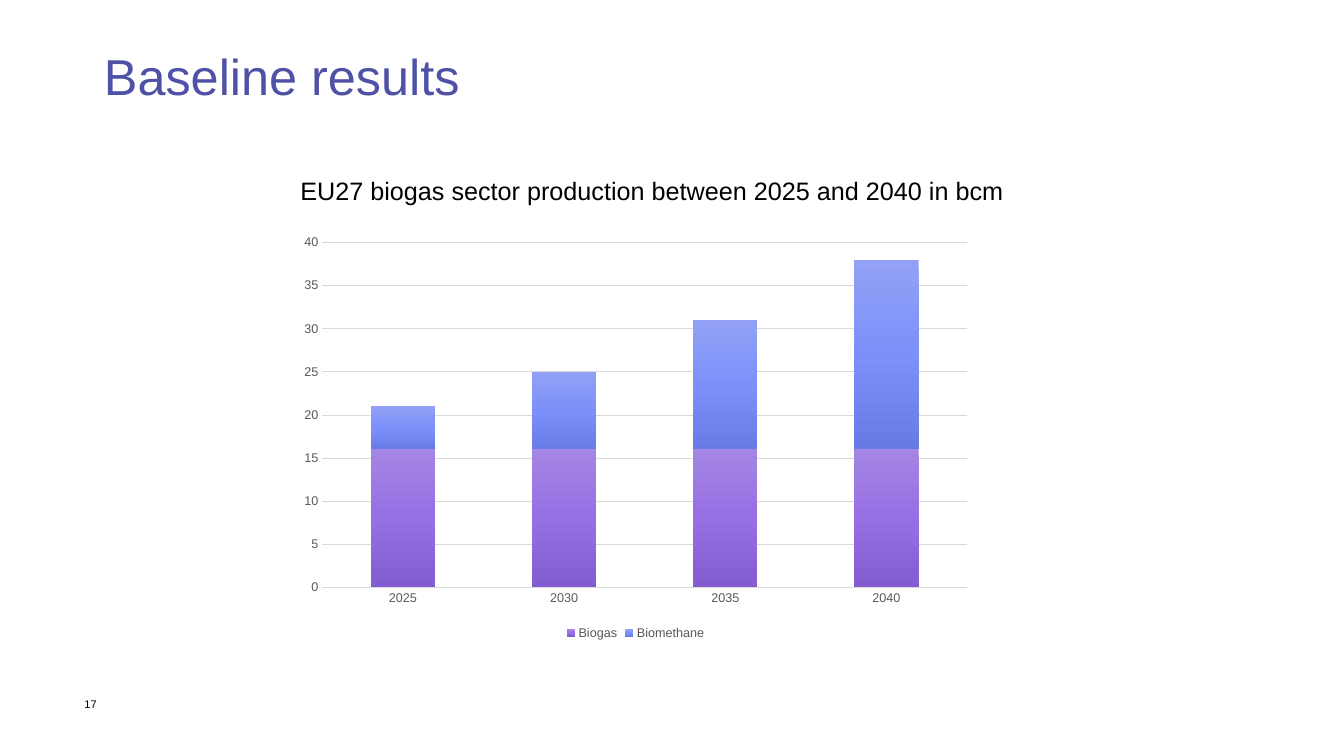
"""Build the slide on baseline results of EU27 biogas sector production."""
from dataclasses import dataclass

from lxml.etree import SubElement
from pptx import Presentation
from pptx.chart.data import CategoryChartData as ChartData
from pptx.dml.color import RGBColor as Rgb
from pptx.enum.chart import XL_CHART_TYPE as ChartType
from pptx.enum.chart import XL_LEGEND_POSITION as LegendPosition
from pptx.enum.chart import XL_TICK_MARK as TickMark
from pptx.enum.text import MSO_ANCHOR as Anchor
from pptx.enum.text import MSO_AUTO_SIZE as AutoSize
from pptx.enum.text import PP_ALIGN as Align
from pptx.oxml.ns import qn
from pptx.util import Cm, Pt

HEADING = "Baseline results"
CAPTION = "EU27 biogas sector production between 2025 and 2040 in bcm"
PAGE_NUMBER = "17"
YEARS = ["2025", "2030", "2035", "2040"]
PRODUCTION = {"Biogas": [16, 16, 16, 16], "Biomethane": [5, 9, 15, 22]}

PAGE_SIZE = (33.87, 19.05)
HEADING_AREA = (2.62, 0.84, 22.1, 2.18)
CAPTION_AREA = (7.32, 4.29, 18.24, 1.02)
CHART_AREA = (7.32, 5.72, 17.4, 10.52)
NUMBER_AREA = (1.88, 17.45, 1.14, 0.66)


@dataclass(frozen=True)
class Theme:
    font: str = "Arial"
    heading: str = "4E51A5"
    text: str = "000000"
    label: str = "595959"
    grid: str = "D9D9D9"
    gradients: tuple = (
        ("A486E4", "966FE4", "835CD1"),
        ("92A1F6", "7C90F9", "677BE4"),
    )
    heading_size: float = 36
    caption_size: float = 18
    chart_size: float = 10
    label_size: float = 9
    number_size: float = 7.9


THEME = Theme()


def style_font(font, size, color):
    font.name = THEME.font
    font.size = Pt(size)
    font.color.rgb = Rgb.from_string(color)


def write(frame, words, size, color):
    run = frame.paragraphs[0].add_run()
    run.text = words
    style_font(run.font, size, color)


def add_heading(slide):
    heading = slide.shapes.title
    heading.left, heading.top, heading.width, heading.height = map(Cm, HEADING_AREA)
    frame = heading.text_frame
    frame.auto_size = AutoSize.NONE
    frame.vertical_anchor = Anchor.MIDDLE
    frame.margin_left = frame.margin_right = frame.margin_bottom = 0
    frame.paragraphs[0].alignment = Align.LEFT
    frame.paragraphs[0].line_spacing = 0.9
    write(frame, HEADING, THEME.heading_size, THEME.heading)


def add_text(slide, area, words, size):
    frame = slide.shapes.add_textbox(*map(Cm, area)).text_frame
    frame.word_wrap = True
    write(frame, words, size, THEME.text)
    return frame


def fill_gradient(series, colors):
    properties = series.format.fill._xPr
    gradient = SubElement(properties, qn("a:gradFill"), rotWithShape="1")
    stops = SubElement(gradient, qn("a:gsLst"))
    for step, color in enumerate(colors):
        position = step * 100000 // (len(colors) - 1)
        stop = SubElement(stops, qn("a:gs"), pos=str(position))
        SubElement(stop, qn("a:srgbClr"), val=color)
    SubElement(gradient, qn("a:lin"), ang="5400000", scaled="0")


def style_axis(axis):
    axis.major_tick_mark = axis.minor_tick_mark = TickMark.NONE
    style_font(axis.tick_labels.font, THEME.label_size, THEME.label)


def add_production_chart(slide):
    production = ChartData(number_format="0")
    production.categories = YEARS
    for gas, amounts in PRODUCTION.items():
        production.add_series(gas, amounts)
    chart = slide.shapes.add_chart(
        ChartType.COLUMN_STACKED, *map(Cm, CHART_AREA), production
    ).chart
    style_font(chart.font, THEME.chart_size, THEME.text)
    chart.has_title = False

    chart.has_legend = True
    chart.legend.position = LegendPosition.BOTTOM
    chart.legend.include_in_layout = False
    style_font(chart.legend.font, THEME.label_size, THEME.label)

    years, amounts = chart.category_axis, chart.value_axis
    style_axis(years)
    style_axis(amounts)
    years.format.line.color.rgb = Rgb.from_string(THEME.grid)
    years.format.line.width = Pt(1)
    amounts.minimum_scale, amounts.maximum_scale, amounts.major_unit = 0, 40, 5
    amounts.tick_labels.number_format = "0"
    amounts.tick_labels.number_format_is_linked = False
    amounts.format.line.fill.background()
    grid = amounts.major_gridlines.format.line
    grid.color.rgb = Rgb.from_string(THEME.grid)
    grid.width = Pt(0.75)

    columns = chart.plots[0]
    columns.gap_width, columns.overlap = 150, 100
    columns.vary_by_categories = False
    for series, colors in zip(columns.series, THEME.gradients):
        series.invert_if_negative = False
        fill_gradient(series, colors)


def main():
    deck = Presentation()
    deck.slide_width, deck.slide_height = map(Cm, PAGE_SIZE)
    slide = deck.slides.add_slide(deck.slide_layouts[5])
    add_text(slide, NUMBER_AREA, PAGE_NUMBER, THEME.number_size)
    add_heading(slide)
    add_production_chart(slide)
    caption = add_text(slide, CAPTION_AREA, CAPTION, THEME.caption_size)
    caption.auto_size = AutoSize.SHAPE_TO_FIT_TEXT
    deck.save("out.pptx")


if __name__ == "__main__":
    main()
